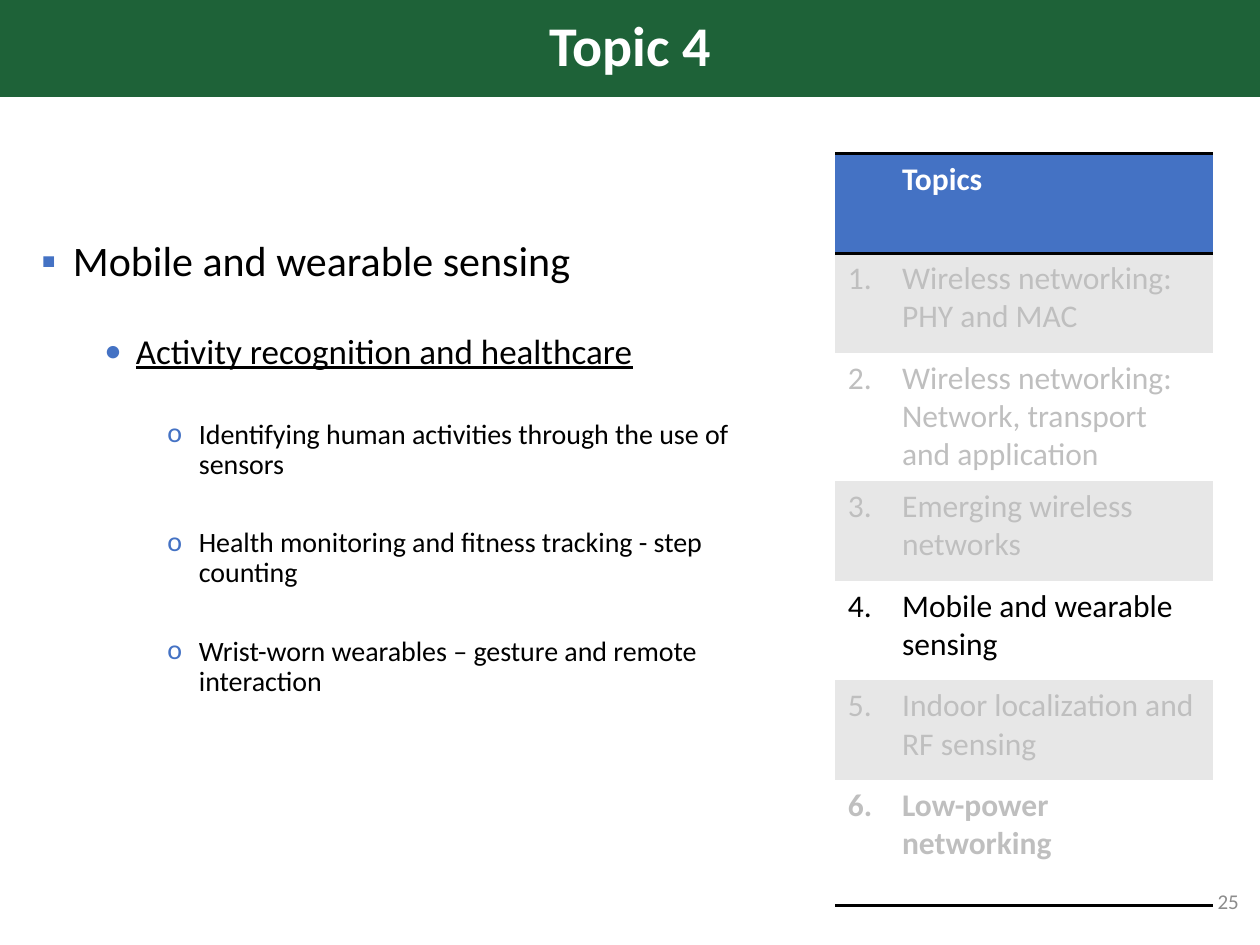
from pptx import Presentation
from pptx.dml.color import RGBColor
from pptx.enum.text import MSO_ANCHOR, MSO_AUTO_SIZE, PP_ALIGN
from pptx.oxml import parse_xml
from pptx.oxml.ns import nsdecls
from pptx.util import Inches, Pt

# Content
TITLE = "Topic 4"
PAGE = "25"
OUTLINE = [
    (0, "Mobile and wearable sensing"),
    (1, "Activity recognition and healthcare"),
    (2, "Identifying human activities through the use of sensors"),
    (2, "Health monitoring and fitness tracking - step counting"),
    (2, "Wrist-worn wearables – gesture and remote interaction"),
]
TOPICS_HEAD = "Topics"
TOPICS = [
    "Wireless networking: PHY and MAC",
    "Wireless networking: Network, transport and application",
    "Emerging wireless networks",
    "Mobile and wearable sensing",
    "Indoor localization and RF sensing",
    "Low-power networking",
]
CURRENT = 4
COL_WIDTHS = (0.43, 2.57)
ROW_HEIGHTS = (0.79, 0.79, 1.02, 0.79, 0.79, 0.79, 1)

THEME = {
    "font": "Calibri",
    "green": "1E6238", "blue": "4472C4", "white": "FFFFFF", "black": "000000",
    "muted": "BFBFBF", "band": "E7E7E7", "number": "8C8C8C",
    "title": 32, "table": 18, "page": 12,
}
# Size, bullet, space before and underline per outline level
LEVELS = [
    {"size": 24, "bullet": "▪", "before": 0, "underline": False},
    {"size": 20, "bullet": "•", "before": 27.5, "underline": True},
    {"size": 16, "bullet": "o", "before": 27.5, "underline": False},
]
NO_STYLE = "{2D5ABB26-0587-4C30-8999-92F81FD0307C}"


def color(name):
    return RGBColor.from_string(THEME[name])


def paint(target, name):
    target.fill.solid()
    target.fill.fore_color.rgb = color(name)


def write(p, text, size, name, **fmt):
    r = p.add_run()
    r.text = text
    r.font.color.rgb = color(name)
    for key, value in {"name": THEME["font"], "size": Pt(size), **fmt}.items():
        setattr(r.font, key, value)


def add_text(s, *box):
    tf = s.shapes.add_textbox(*map(Inches, box)).text_frame
    tf.word_wrap = True
    return tf


def set_bullet(p, level, char):
    pPr = p._p.get_or_add_pPr()
    pPr.set("marL", str(Inches(0.25 + 0.5 * level)))
    pPr.set("indent", str(Inches(-0.25)))
    ns = nsdecls("a")
    for xml in (
        f'<a:buClr {ns}><a:srgbClr val="{THEME["blue"]}"/></a:buClr>',
        f'<a:buFont {ns} typeface="{THEME["font"]}"/>',
        f'<a:buChar {ns} char="{char}"/>',
    ):
        pPr.append(parse_xml(xml))


def set_borders(cell, sides):
    tcPr = cell._tc.get_or_add_tcPr()
    for i, side in enumerate(sides):
        tcPr.insert(i, parse_xml(
            f'<a:ln{side} {nsdecls("a")} w="{Pt(2)}"><a:solidFill>'
            f'<a:srgbClr val="{THEME["black"]}"/></a:solidFill></a:ln{side}>'))


def add_title(s):
    sp = s.shapes.title
    box = {"left": 0, "top": 0, "width": 10, "height": 0.77}
    for key, value in box.items():
        setattr(sp, key, Inches(value))
    paint(sp, "green")
    tf = sp.text_frame
    tf.auto_size = MSO_AUTO_SIZE.NONE
    tf.vertical_anchor = MSO_ANCHOR.MIDDLE
    p = tf.paragraphs[0]
    p.alignment, p.line_spacing = PP_ALIGN.CENTER, 0.9
    write(p, TITLE, THEME["title"], "white", bold=True)


def add_outline(s):
    tf = add_text(s, 0.23, 1.86, 6.05, 5.29)
    for i, (level, text) in enumerate(OUTLINE):
        p = tf.add_paragraph() if i else tf.paragraphs[0]
        look = LEVELS[level]
        fmt = {"level": level, "line_spacing": 0.9, "space_before": Pt(look["before"])}
        for key, value in fmt.items():
            setattr(p, key, value)
        set_bullet(p, level, look["bullet"])
        write(p, text, look["size"], "black", underline=look["underline"])


def add_topics(s):
    rows = [("", TOPICS_HEAD)] + [(f"{n}.", t) for n, t in enumerate(TOPICS, 1)]
    box = (6.63, 1.22, sum(COL_WIDTHS), sum(ROW_HEIGHTS))
    table = s.shapes.add_table(len(rows), 2, *map(Inches, box)).table
    table.first_row = table.horz_banding = False
    table._tbl.tblPr[0].text = NO_STYLE
    for col, width in zip(table.columns, COL_WIDTHS):
        col.width = Inches(width)
    for n, (row, texts) in enumerate(zip(table.rows, rows)):
        row.height = Inches(ROW_HEIGHTS[n])
        last = n == len(TOPICS)
        if n == 0:
            fill, ink, sides = "blue", "white", "TB"
        else:
            fill = "band" if n % 2 else "white"
            ink = "black" if n == CURRENT else "muted"
            sides = "B" if last else ""
        for cell, text in zip(row.cells, texts):
            paint(cell, fill)
            set_borders(cell, sides)
            if text:
                write(cell.text_frame.paragraphs[0], text, THEME["table"], ink,
                      bold=n == 0 or last)


def add_page_number(s):
    # Sits just right of the table's edge, in front of it
    tf = add_text(s, 7.68, 6.95, 2.25, 0.4)
    tf.vertical_anchor = MSO_ANCHOR.MIDDLE
    p = tf.paragraphs[0]
    p.alignment = PP_ALIGN.RIGHT
    write(p, PAGE, THEME["page"], "number")


def main():
    prs = Presentation()
    prs.slide_width, prs.slide_height = Inches(10), Inches(7.5)
    s = prs.slides.add_slide(prs.slide_layouts[5])
    add_title(s)
    add_outline(s)
    add_topics(s)
    add_page_number(s)
    prs.save("out.pptx")


if __name__ == "__main__":
    main()
